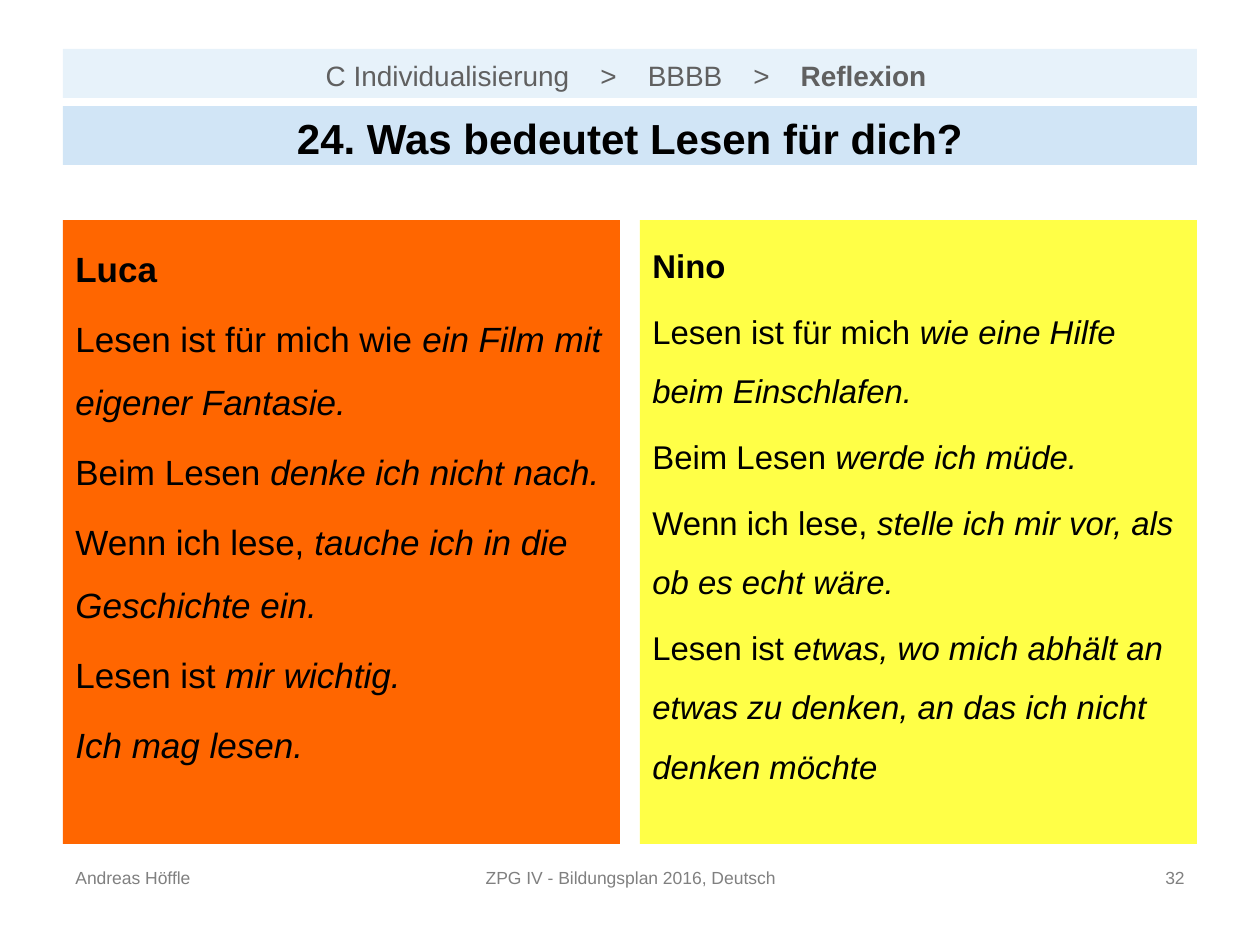
from lxml import etree
from pptx import Presentation
from pptx.dml.color import RGBColor
from pptx.enum.shapes import MSO_SHAPE as SHAPE
from pptx.enum.text import MSO_ANCHOR as ANCHOR, PP_ALIGN as ALIGN
from pptx.oxml.ns import qn
from pptx.util import Emu, Pt

EMU_PER_PX = 914400 / 126
BLUE = RGBColor(0x1C, 0x81, 0xD4)
ORANGE = RGBColor(0xFF, 0x66, 0x00)
YELLOW = RGBColor(0xFF, 0xFF, 0x47)
BLACK = RGBColor(0x00, 0x00, 0x00)
DARK_GREY = RGBColor(0x60, 0x60, 0x60)
GREY = RGBColor(0x80, 0x80, 0x80)

MARGIN, WIDTH = 63, 1134
PANEL_TOP, PANEL_W, PANEL_H = 220, 557, 624
FOOTER_TOP, FOOTER_H = 861, 63
BREADCRUMB_GAP = 13.3

# Each statement is a plain opening and an italic completion.
LUCA = [
    ("Lesen ist für mich wie ", "ein Film mit eigener Fantasie."),
    ("Beim Lesen ", "denke ich nicht nach."),
    ("Wenn ich lese, ", "tauche ich in die Geschichte ein."),
    ("Lesen ist ", "mir wichtig."),
    ("", "Ich mag lesen."),
]
NINO = [
    ("Lesen ist für mich ", "wie eine Hilfe beim Einschlafen."),
    ("Beim Lesen ", "werde ich müde."),
    ("Wenn ich lese, ", "stelle ich mir vor, als ob es echt wäre."),
    ("Lesen ist ", "etwas, wo mich abhält an etwas zu denken, "
                   "an das ich nicht denken möchte"),
]
FOOTERS = [
    (63, 294, "Andreas Höffle", ALIGN.LEFT),
    (431, 399, "ZPG IV - Bildungsplan 2016, Deutsch", ALIGN.CENTER),
    (903, 294, "32", ALIGN.RIGHT),
]


def px(*values):
    return [Emu(round(v * EMU_PER_PX)) for v in values]


def add_box(slide, box, color, opacity=100, anchor=ANCHOR.TOP):
    """Add a borderless filled rectangle and return its text frame."""
    sp = slide.shapes.add_shape(SHAPE.RECTANGLE, *px(*box))
    sp.shadow.inherit = False
    sp.line.fill.background()
    sp.fill.solid()
    sp.fill.fore_color.rgb = color
    if opacity < 100:
        clr = sp.fill._xPr.find(".//" + qn("a:srgbClr"))
        etree.SubElement(clr, qn("a:alpha")).set("val", str(opacity * 1000))
    tf = sp.text_frame
    tf.word_wrap = True
    tf.vertical_anchor = anchor
    return tf


def add_run(p, text, size, color=BLACK, **formats):
    r = p.add_run()
    r.text = text
    r.font.color.rgb = color
    for name, value in {"name": "Arial", "size": Pt(size), **formats}.items():
        setattr(r.font, name, value)
    return r


def add_breadcrumb(slide, steps, current):
    tf = add_box(slide, (MARGIN, 49, WIDTH, 49), BLUE, 10, ANCHOR.BOTTOM)
    p = tf.paragraphs[0]
    p.alignment = ALIGN.CENTER
    for step in steps:
        add_run(p, step, 16, DARK_GREY)
        arrow = add_run(p, " >", 16, DARK_GREY)
        arrow._r.get_or_add_rPr().set("spc", str(round(BREADCRUMB_GAP * 100)))
        add_run(p, " ", 16, DARK_GREY)
    add_run(p, current + " ", 16, DARK_GREY, bold=True)


def add_heading(slide, text):
    p = add_box(slide, (MARGIN, 106, WIDTH, 59), BLUE, 20).paragraphs[0]
    p.alignment = ALIGN.CENTER
    p.space_before = Pt(4.8)
    add_run(p, text, 24, bold=True)


def add_panel(slide, left, color, name, statements, size):
    tf = add_box(slide, (left, PANEL_TOP, PANEL_W, PANEL_H), color)
    add_run(tf.paragraphs[0], name, size, bold=True)
    for opening, completion in statements:
        p = tf.add_paragraph()
        if opening:
            add_run(p, opening, size)
        add_run(p, completion, size, italic=True)
    for p in tf.paragraphs:
        p.alignment = ALIGN.LEFT
        p.line_spacing = 1.5
        p.space_before = Pt(size * 0.2)


def add_footer(slide, left, width, text, align):
    box = px(left, FOOTER_TOP, width, FOOTER_H)
    tf = slide.shapes.add_textbox(*box).text_frame
    tf.word_wrap = True
    p = tf.paragraphs[0]
    p.alignment = align
    add_run(p, text, 10, GREY)


def main():
    prs = Presentation()
    prs.slide_width, prs.slide_height = px(1260, 945)
    slide = prs.slides.add_slide(prs.slide_layouts[6])
    add_breadcrumb(slide, ["C Individualisierung", "BBBB"], "Reflexion")
    for footer in FOOTERS:
        add_footer(slide, *footer)
    add_heading(slide, "24. Was bedeutet Lesen für dich?")
    add_panel(slide, MARGIN, ORANGE, "Luca", LUCA, 20)
    add_panel(slide, MARGIN + WIDTH - PANEL_W, YELLOW, "Nino", NINO, 18.8)
    prs.save("out.pptx")


if __name__ == "__main__":
    main()
